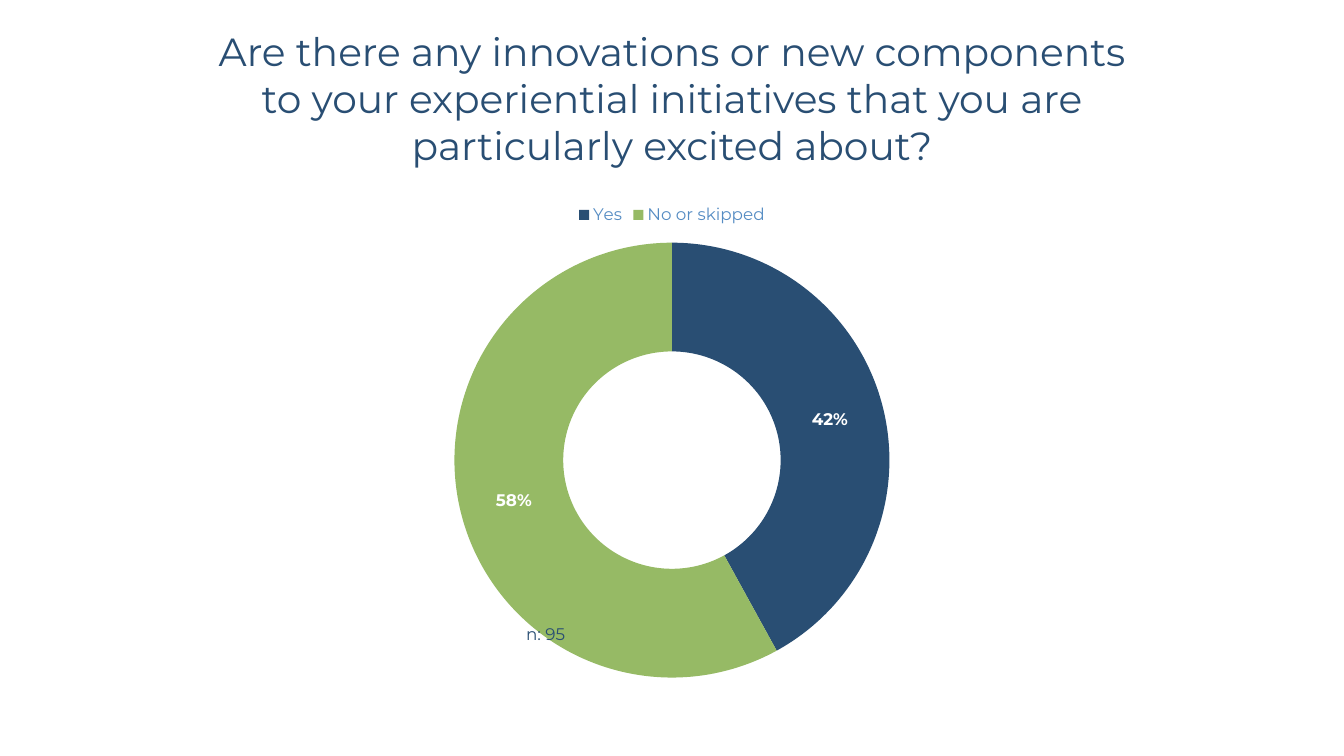
from pptx import Presentation
from pptx.chart.data import CategoryChartData
from pptx.dml.color import RGBColor
from pptx.enum.chart import XL_CHART_TYPE, XL_LEGEND_POSITION
from pptx.enum.text import MSO_ANCHOR, MSO_AUTO_SIZE, PP_ALIGN
from pptx.util import Inches, Pt

DOUGHNUT = XL_CHART_TYPE.DOUGHNUT
LEGEND_TOP = XL_LEGEND_POSITION.TOP
TOP = MSO_ANCHOR.TOP
NO_FIT = MSO_AUTO_SIZE.NONE
CENTER, LEFT = PP_ALIGN.CENTER, PP_ALIGN.LEFT

FONT = "Montserrat"
NAVY, GREEN, BLUE, WHITE = "294E73", "96BA65", "558CC3", "FFFFFF"

QUESTION = (
    "Are there any innovations or new components to your experiential "
    "initiatives that you are particularly excited about?"
)
ANSWERS = [("Yes", 42, NAVY), ("No or skipped", 58, GREEN)]
SAMPLE_SIZE = "n: 95"

TITLE_AREA = (2.02, 0.22, 9.29, 1.51)
CHART_AREA = (2.96, 1.92, 7.41, 4.94)
SAMPLE_AREA = (5.12, 6.14, 0.96, 0.3)


def color(value):
    return RGBColor.from_string(value)


def style_font(font, size, value, bold=False):
    font.name = FONT
    font.size = Pt(size)
    font.bold = bold
    font.color.rgb = color(value)


def place(box, area):
    box.left, box.top, box.width, box.height = map(Inches, area)


def write(box, text, size, alignment):
    frame = box.text_frame
    frame.word_wrap = True
    frame.auto_size = NO_FIT
    frame.vertical_anchor = TOP
    para = frame.paragraphs[0]
    para.alignment = alignment
    para.line_spacing = 1.0
    span = para.add_run()
    span.text = text
    style_font(span.font, size, NAVY)


def add_answer_chart(page):
    data = CategoryChartData()
    data.categories = [name for name, _, _ in ANSWERS]
    data.add_series("Series 1", [share for _, share, _ in ANSWERS])
    chart = page.shapes.add_chart(DOUGHNUT, *map(Inches, CHART_AREA), data).chart
    chart.has_title = False
    style_font(chart.font, 10, NAVY)

    chart.has_legend = True
    chart.legend.position = LEGEND_TOP
    chart.legend.include_in_layout = False
    style_font(chart.legend.font, 12, BLUE)

    plot = chart.plots[0]
    plot.vary_by_categories = True
    series = plot.series[0]
    for index, (_, _, fill) in enumerate(ANSWERS):
        slice_format = series.points[index].format
        slice_format.fill.solid()
        slice_format.fill.fore_color.rgb = color(fill)
        slice_format.line.fill.background()

    labels = series.data_labels
    labels.show_percentage = True
    labels.show_value = False
    labels.number_format = "0%"
    labels.number_format_is_linked = False
    style_font(labels.font, 12, WHITE, bold=True)


def main():
    deck = Presentation()
    deck.slide_width, deck.slide_height = Inches(13.33), Inches(7.5)
    page = deck.slides.add_slide(deck.slide_layouts[5])

    title = page.shapes.title
    place(title, TITLE_AREA)
    write(title, QUESTION, 28, CENTER)

    add_answer_chart(page)

    sample = page.shapes.add_textbox(*map(Inches, SAMPLE_AREA))
    write(sample, SAMPLE_SIZE, 12, LEFT)

    deck.save("out.pptx")


if __name__ == "__main__":
    main()
